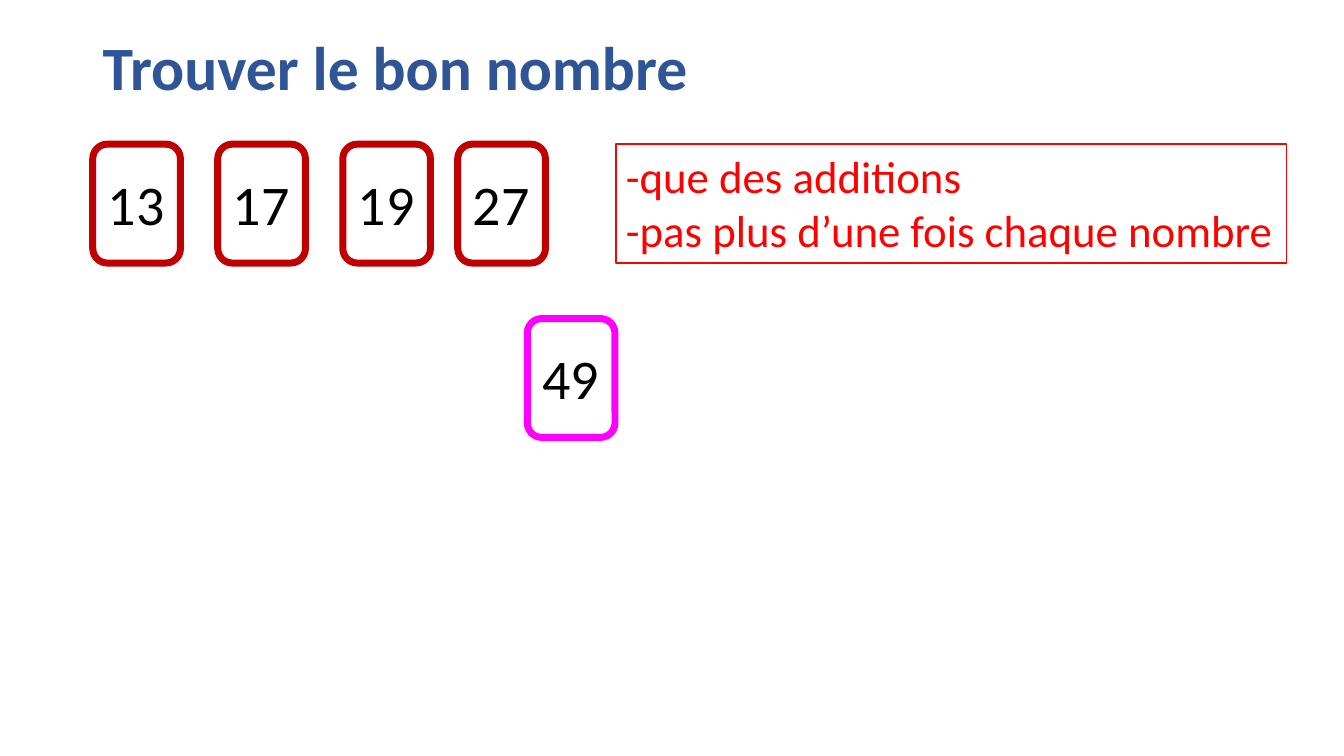
from dataclasses import dataclass

from pptx import Presentation
from pptx.dml.color import RGBColor
from pptx.enum.shapes import MSO_SHAPE as Shape
from pptx.enum.text import MSO_ANCHOR as Anchor, MSO_AUTO_SIZE as AutoSize, PP_ALIGN as Align
from pptx.util import Emu, Pt

EMU_PER_PX = 9144  # 100 px to the inch


@dataclass(frozen=True)
class Theme:
    font: str = "Calibri"
    title_color: str = "2F5597"
    number_color: str = "000000"
    card_color: str = "C00000"
    target_color: str = "FF00FF"
    rule_color: str = "FF0000"
    title_size: int = 44
    number_size: int = 40
    rule_size: int = 32
    card_line: int = 5
    rule_line: int = 1


THEME = Theme()
CARD_WIDTH, CARD_HEIGHT = 87, 118
CARD_TOP = 143
CARDS = {"13": 92, "17": 216, "19": 340, "27": 454}


def px(*lengths):
    return [Emu(length * EMU_PER_PX) for length in lengths]


def write(frame, lines, size, color, bold=False, align=Align.LEFT, spacing=1.0):
    for index, line in enumerate(lines):
        para = frame.paragraphs[0] if index == 0 else frame.add_paragraph()
        para.alignment = align
        para.line_spacing = spacing
        span = para.add_run()
        span.text = line
        span.font.name = THEME.font
        span.font.size = Pt(size)
        span.font.bold = bold
        span.font.color.rgb = RGBColor.from_string(color)


def add_outline(shapes, kind, bounds, color, width):
    box = shapes.add_shape(kind, *px(*bounds))
    box.shadow.inherit = False
    box.fill.background()
    box.line.color.rgb = RGBColor.from_string(color)
    box.line.width = Pt(width)
    return box


def add_title(page, text):
    box = page.shapes.add_textbox(*px(92, 27, 1150, 85))
    frame = box.text_frame
    frame.word_wrap = True
    frame.vertical_anchor = Anchor.MIDDLE
    write(frame, [text], THEME.title_size, THEME.title_color, bold=True, spacing=0.9)


def add_card(page, number, left, top, color):
    group = page.shapes.add_group_shape()
    add_outline(group.shapes, Shape.ROUNDED_RECTANGLE,
                (left, top, CARD_WIDTH, CARD_HEIGHT), color, THEME.card_line)
    box = group.shapes.add_textbox(*px(left + 5, top + 20, 76, 77))
    frame = box.text_frame
    frame.word_wrap = True
    frame.auto_size = AutoSize.SHAPE_TO_FIT_TEXT
    write(frame, [number], THEME.number_size, THEME.number_color, align=Align.CENTER)


def add_rules(page, lines):
    box = add_outline(page.shapes, Shape.RECTANGLE, (611, CARD_TOP, 665, CARD_HEIGHT),
                      THEME.rule_color, THEME.rule_line)
    frame = box.text_frame
    frame.word_wrap = True
    frame.vertical_anchor = Anchor.TOP
    frame.auto_size = AutoSize.SHAPE_TO_FIT_TEXT
    write(frame, lines, THEME.rule_size, THEME.rule_color)


def main():
    deck = Presentation()
    deck.slide_width, deck.slide_height = px(1333, 750)
    page = deck.slides.add_slide(deck.slide_layouts[6])

    add_title(page, "Trouver le bon nombre")

    # Numbers to add up
    for number, left in CARDS.items():
        add_card(page, number, left, CARD_TOP, THEME.card_color)

    # Rules of the game
    add_rules(page, ["-que des additions", "-pas plus d’une fois chaque nombre"])

    # Number to reach
    add_card(page, "49", 523, 316, THEME.target_color)

    deck.save("out.pptx")


if __name__ == "__main__":
    main()
